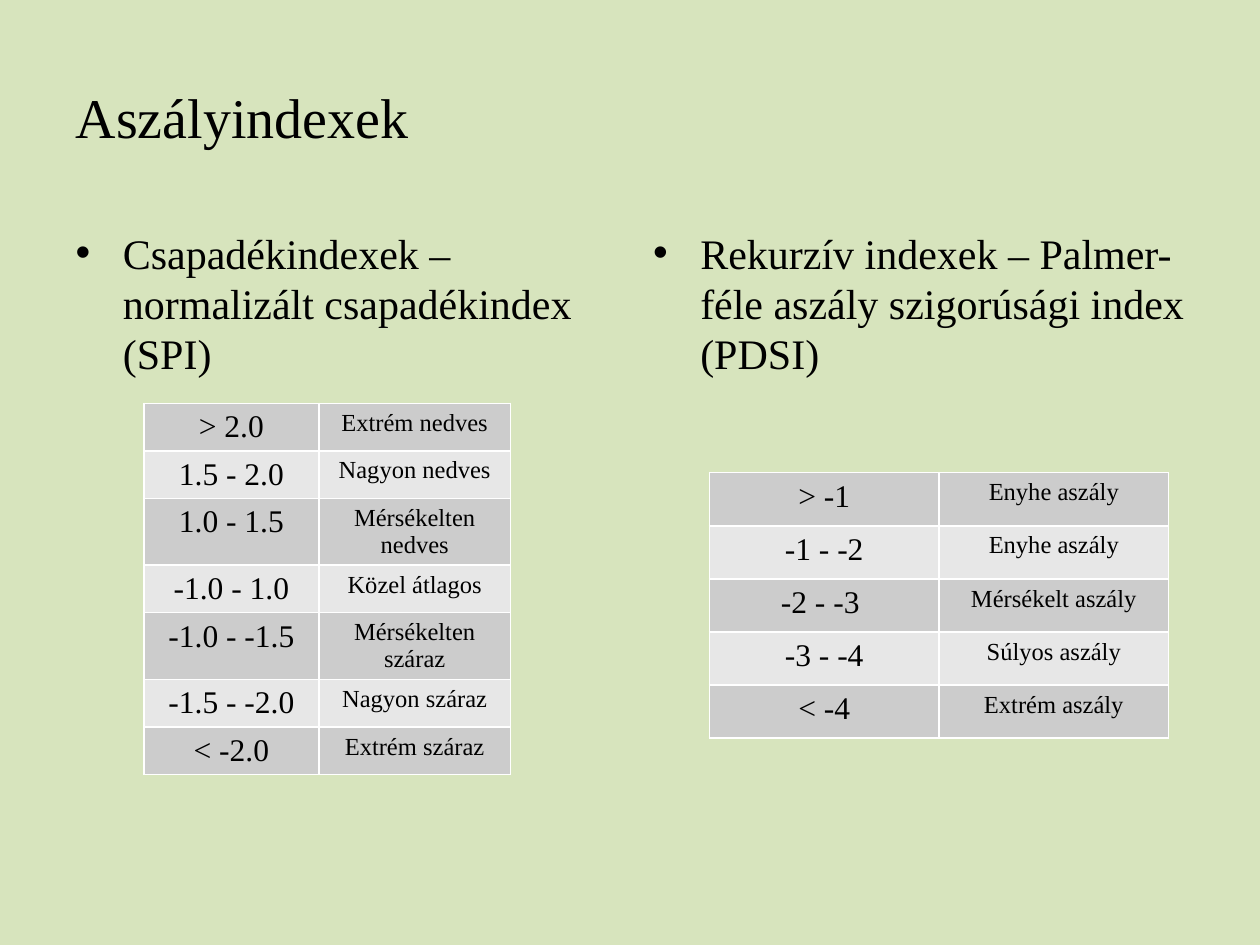
from lxml import etree
from pptx import Presentation
from pptx.dml.color import RGBColor
from pptx.enum.text import MSO_ANCHOR, PP_ALIGN
from pptx.oxml.ns import qn
from pptx.util import Cm, Pt

LEFT, CENTER = PP_ALIGN.LEFT, PP_ALIGN.CENTER
MIDDLE = MSO_ANCHOR.MIDDLE
TYPEFACE = "Times New Roman"
BACKGROUND, INK, GRID = "D7E4BD", "000000", "FFFFFF"
BANDS = ("CCCCCC", "E7E7E7")
COLUMN_SIZES = (18, 14)
BORDER_WIDTH = Pt(1)

SPI_CLASSES = [
    ("> 2.0", "Extrém nedves"),
    ("1.5 - 2.0", "Nagyon nedves"),
    ("1.0 - 1.5", "Mérsékelten nedves"),
    ("-1.0 - 1.0", "Közel átlagos"),
    ("-1.0 - -1.5", "Mérsékelten száraz"),
    ("-1.5 - -2.0", "Nagyon száraz"),
    ("< -2.0", "Extrém száraz"),
]
PDSI_CLASSES = [
    ("> -1", "Enyhe aszály"),
    ("-1 - -2", "Enyhe aszály"),
    ("-2 - -3 ", "Mérsékelt aszály"),
    ("-3 - -4", "Súlyos aszály"),
    ("< -4", "Extrém aszály"),
]


def paint(fill, color):
    fill.solid()
    fill.fore_color.rgb = RGBColor.from_string(color)


def write(frame, text, size, align):
    frame.text = text
    paragraph = frame.paragraphs[0]
    paragraph.alignment = align
    paragraph.font.name = TYPEFACE
    paragraph.font.size = Pt(size)
    paragraph.font.color.rgb = RGBColor.from_string(INK)


def fill_placeholder(placeholder, text, size, left, top, width, height):
    placeholder.left, placeholder.top = Cm(left), Cm(top)
    placeholder.width, placeholder.height = Cm(width), Cm(height)
    write(placeholder.text_frame, text, size, LEFT)


def outline_cell(cell):
    properties = cell._tc.get_or_add_tcPr()
    for side in ("a:lnL", "a:lnR", "a:lnT", "a:lnB"):
        border = etree.SubElement(properties, qn(side), w=str(BORDER_WIDTH))
        solid = etree.SubElement(border, qn("a:solidFill"))
        etree.SubElement(solid, qn("a:srgbClr"), val=GRID)


def add_index_table(slide, classes, left, top, widths, row_height):
    table = slide.shapes.add_table(
        len(classes), len(widths), Cm(left), Cm(top),
        Cm(sum(widths)), Cm(row_height * len(classes))).table
    table.first_row = table.horz_banding = False
    for column, width in zip(table.columns, widths):
        column.width = Cm(width)
    for row, entries in enumerate(classes):
        table.rows[row].height = Cm(row_height)
        for column, (entry, size) in enumerate(zip(entries, COLUMN_SIZES)):
            cell = table.cell(row, column)
            outline_cell(cell)
            paint(cell.fill, BANDS[row % 2])
            write(cell.text_frame, entry, size, CENTER)


def main():
    deck = Presentation()
    deck.slide_width, deck.slide_height = Cm(25.4), Cm(19.05)
    slide = deck.slides.add_slide(deck.slide_layouts[3])
    paint(slide.background.fill, BACKGROUND)

    title, spi, pdsi = slide.placeholders
    fill_placeholder(title, "Aszályindexek", 32, 1.27, 0.76, 22.86, 3.18)
    title.text_frame.vertical_anchor = MIDDLE
    fill_placeholder(spi, "Csapadékindexek – normalizált csapadékindex (SPI)",
                     24, 1.27, 4.45, 11.22, 12.57)
    fill_placeholder(pdsi, "Rekurzív indexek – Palmer-féle aszály szigorúsági index (PDSI)",
                     24, 12.91, 4.45, 11.22, 12.57)

    add_index_table(slide, SPI_CLASSES, 2.9, 8.13, (3.53, 3.86), 0.89)
    add_index_table(slide, PDSI_CLASSES, 14.3, 9.53, (4.63, 4.63), 1.07)
    deck.save("out.pptx")


if __name__ == "__main__":
    main()
